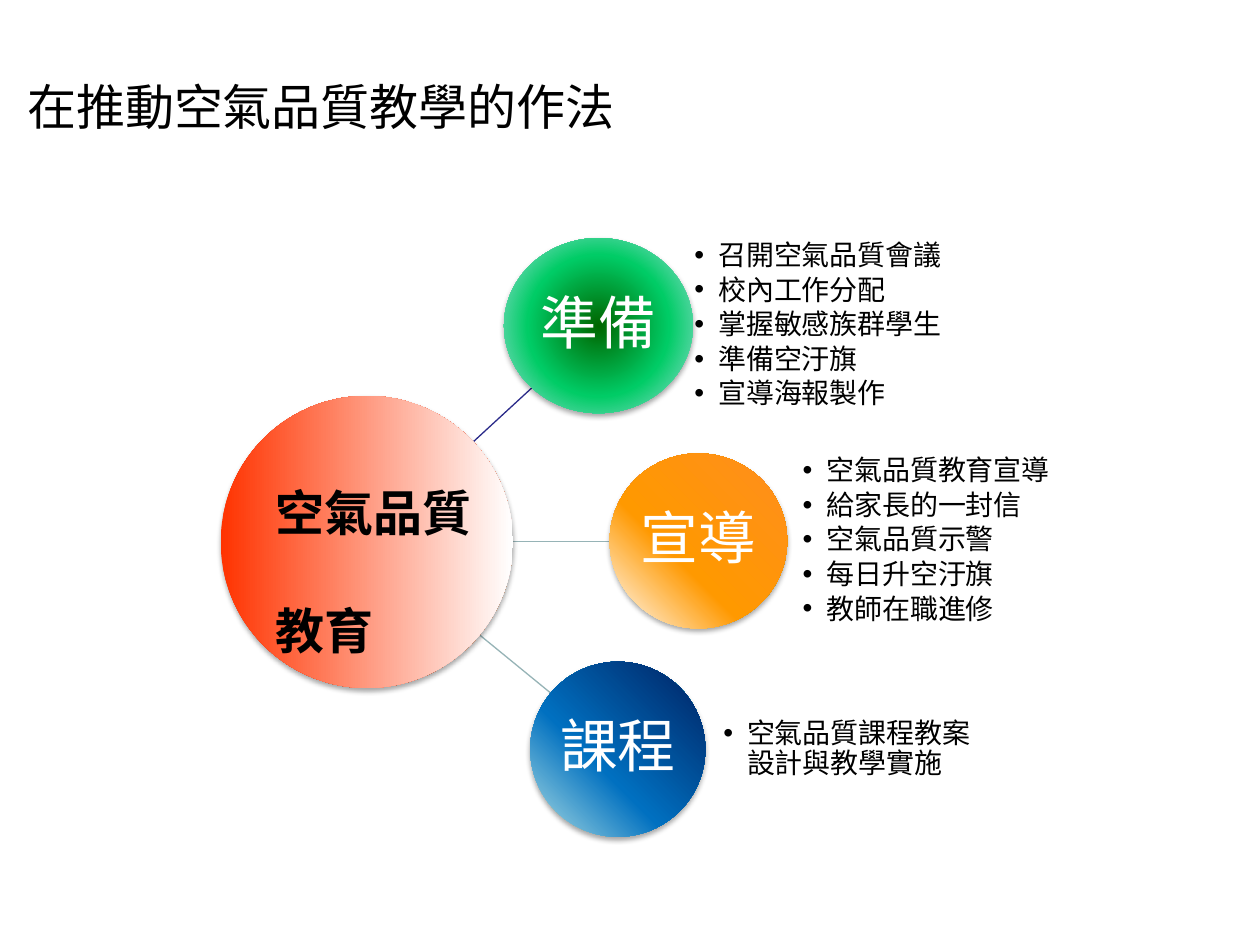
import lxml.etree
import pptx
import pptx.dml.color
import pptx.enum.shapes
import pptx.enum.text
import pptx.oxml
import pptx.oxml.ns
import pptx.util

Cm = pptx.util.Cm
Pt = pptx.util.Pt
ANCHOR = pptx.enum.text.MSO_ANCHOR
ALIGN = pptx.enum.text.PP_ALIGN

COLORS = {
    "text": "000000", "label": "FFFFFF", "line": "96B3B6", "line_dark": "2A2A89",
    "red": "FF3300", "white": "FFFFFF", "green_dark": "006600", "green": "00CC66",
    "pale": "AFE0E4", "navy": "002060", "blue": "0070C0",
    "orange_dark": "FF8E1D", "orange": "FF9900",
}
CENTER = (50, 50, 50, 50)
TOP_RIGHT = (100, 0, 0, 100)
HUB = (4.45, 7.98, 5.89, 5.89)
LINK_START = 9.45
BRANCHES = [
    {"label": "準備", "circle": (10.16, 4.8, 3.81, 3.53),
     "stops": [(0, "green_dark"), (55, "green"), (100, "pale")], "focus": CENTER,
     "link": (8.99, 10.72, 7.82), "line": "line_dark", "placeholder": 1,
     "list_left": 14.0, "list_width": 5.72,
     "items": ["召開空氣品質會議", "校內工作分配", "掌握敏感族群學生", "準備空汙旗", "宣導海報製作"]},
    {"label": "宣導", "circle": (12.29, 9.14, 3.58, 3.53),
     "stops": [(0, "orange_dark"), (61, "orange"), (100, "white")], "focus": TOP_RIGHT,
     "link": (10.92, 12.29, 10.92), "line": "line", "placeholder": 2,
     "list_left": 16.18, "list_width": 5.36,
     "items": ["空氣品質教育宣導", "給家長的一封信", "空氣品質示警", "每日升空汙旗", "教師在職進修"]},
    {"label": "課程", "circle": (10.69, 13.34, 3.53, 3.53),
     "stops": [(0, "navy"), (60, "blue"), (100, "pale")], "focus": TOP_RIGHT,
     "link": (12.62, 11.1, 13.97), "line": "line", "placeholder": 4,
     "list_left": 14.58, "list_width": 5.31,
     "items": ["空氣品質課程教案設計與教學實施"]},
]


class SlideBuilder:
    heading_font = "Noto Sans CJK SC"
    body_font = "Arial"

    def __init__(self, slide):
        self.slide = slide

    def place(self, shape, left, top, width, height):
        shape.left, shape.top = Cm(left), Cm(top)
        shape.width, shape.height = Cm(width), Cm(height)

    def frame(self, shape, margin, anchor, wrap=True):
        frame = shape.text_frame
        frame.auto_size = pptx.enum.text.MSO_AUTO_SIZE.NONE
        frame.word_wrap = wrap
        frame.vertical_anchor = anchor
        frame.margin_left = frame.margin_right = Cm(margin)
        frame.margin_top = frame.margin_bottom = Cm(margin / 2)
        return frame

    def style(self, paragraph, size, name, color="text", bold=False):
        font = paragraph.font
        font.size, font.name, font.bold = Pt(size), name, bold
        font.color.rgb = pptx.dml.color.RGBColor.from_string(COLORS[color])

    def title(self, text, *box):
        shape = self.slide.shapes.title
        self.place(shape, *box)
        frame = self.frame(shape, 0.25, ANCHOR.TOP)
        frame.text = text
        frame.paragraphs[0].alignment = ALIGN.LEFT
        self.style(frame.paragraphs[0], 28, self.heading_font)

    def link(self, start_y, end_x, end_y, color):
        connector = self.slide.shapes.add_connector(
            pptx.enum.shapes.MSO_CONNECTOR.STRAIGHT,
            Cm(LINK_START), Cm(start_y), Cm(end_x), Cm(end_y))
        connector.line.width = Pt(0.75)
        connector.line.color.rgb = pptx.dml.color.RGBColor.from_string(COLORS[color])
        lxml.etree.SubElement(connector.element.spPr, pptx.oxml.ns.qn("a:effectLst"))

    def circle(self, box, stops, focus=None):
        shape = self.slide.shapes.add_shape(
            pptx.enum.shapes.MSO_SHAPE.OVAL, *(Cm(length) for length in box))
        shape.line.fill.background()
        shape.shadow.inherit = False
        namespace = pptx.oxml.ns.nsdecls("a")
        stop_xml = "".join(
            f'<a:gs pos="{position * 1000}"><a:srgbClr val="{COLORS[color]}"/></a:gs>'
            for position, color in stops)
        if focus:
            sides = " ".join(f'{side}="{value * 1000}"' for side, value in zip("ltrb", focus))
            shade = f'<a:path path="circle"><a:fillToRect {sides}/></a:path>'
        else:
            shade = '<a:lin ang="0" scaled="0"/>'
        properties = shape.element.spPr
        properties.find(pptx.oxml.ns.qn("a:prstGeom")).addnext(pptx.oxml.parse_xml(
            f'<a:gradFill {namespace} rotWithShape="1"><a:gsLst>{stop_xml}</a:gsLst>{shade}</a:gradFill>'))
        properties.find(pptx.oxml.ns.qn("a:effectLst")).append(pptx.oxml.parse_xml(
            f'<a:outerShdw {namespace} blurRad="{Pt(3.1)}" dist="{Pt(1.8)}" dir="5400000" '
            'rotWithShape="0"><a:srgbClr val="000000"><a:alpha val="35000"/></a:srgbClr></a:outerShdw>'))
        return shape

    def label(self, shape, text):
        frame = self.frame(shape, 0.05, ANCHOR.MIDDLE, wrap=False)
        frame.text = text
        paragraph = frame.paragraphs[0]
        paragraph.alignment = ALIGN.CENTER
        paragraph.line_spacing = 0.9
        self.style(paragraph, 33, self.body_font, "label")

    def hub_text(self, lines, *box):
        shape = self.slide.shapes.add_textbox(*(Cm(length) for length in box))
        frame = self.frame(shape, 0.25, ANCHOR.TOP)
        frame.text = "\n".join(lines)
        for index, paragraph in enumerate(frame.paragraphs):
            paragraph.space_before = Pt(34 if index else 0)
            self.style(paragraph, 28, self.heading_font, bold=True)

    def bullets(self, placeholder, items, *box):
        shape = self.slide.placeholders[placeholder]
        self.place(shape, *box)
        frame = self.frame(shape, 0, ANCHOR.MIDDLE)
        frame.text = "\n".join(items)
        for paragraph in frame.paragraphs:
            properties = paragraph._p.get_or_add_pPr()
            properties.set("marL", str(Cm(0.48)))
            properties.set("indent", str(-Cm(0.48)))
            lxml.etree.SubElement(properties, pptx.oxml.ns.qn("a:buChar")).set("char", "•")
            paragraph.alignment = ALIGN.LEFT
            paragraph.line_spacing = 0.9
            paragraph.space_before = Pt(0)
            paragraph.space_after = Pt(2.5)
            self.style(paragraph, 16, self.body_font)

    def remove_placeholder(self, placeholder):
        element = self.slide.placeholders[placeholder].element
        element.getparent().remove(element)


def main():
    presentation = pptx.Presentation()
    presentation.slide_width, presentation.slide_height = Cm(25.4), Cm(19.05)
    builder = SlideBuilder(presentation.slides.add_slide(presentation.slide_layouts[4]))
    builder.remove_placeholder(3)
    builder.title("在推動空氣品質教學的作法", 0.3, 1.42, 12.8, 1.45)
    for branch in BRANCHES:
        builder.link(*branch["link"], branch["line"])
    builder.circle(HUB, [(0, "red"), (100, "white")])
    builder.hub_text(["空氣品質", "教育"], 5.31, 9.6, 4.6, 3.9)
    for branch in BRANCHES:
        shape = builder.circle(branch["circle"], branch["stops"], branch["focus"])
        builder.label(shape, branch["label"])
        top, height = branch["circle"][1], branch["circle"][3]
        builder.bullets(branch["placeholder"], branch["items"],
                        branch["list_left"], top, branch["list_width"], height)
    presentation.save("out.pptx")


if __name__ == "__main__":
    main()
